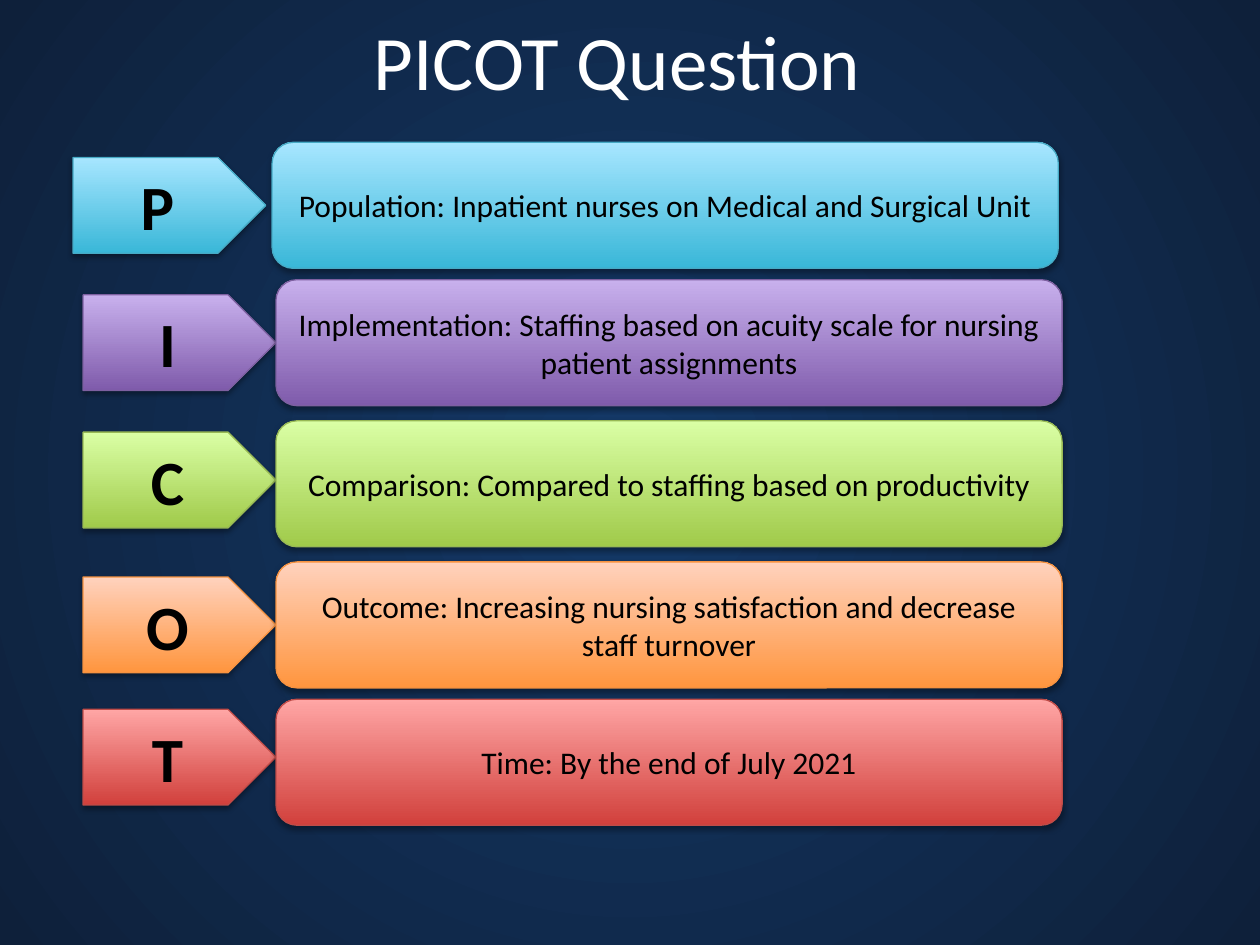
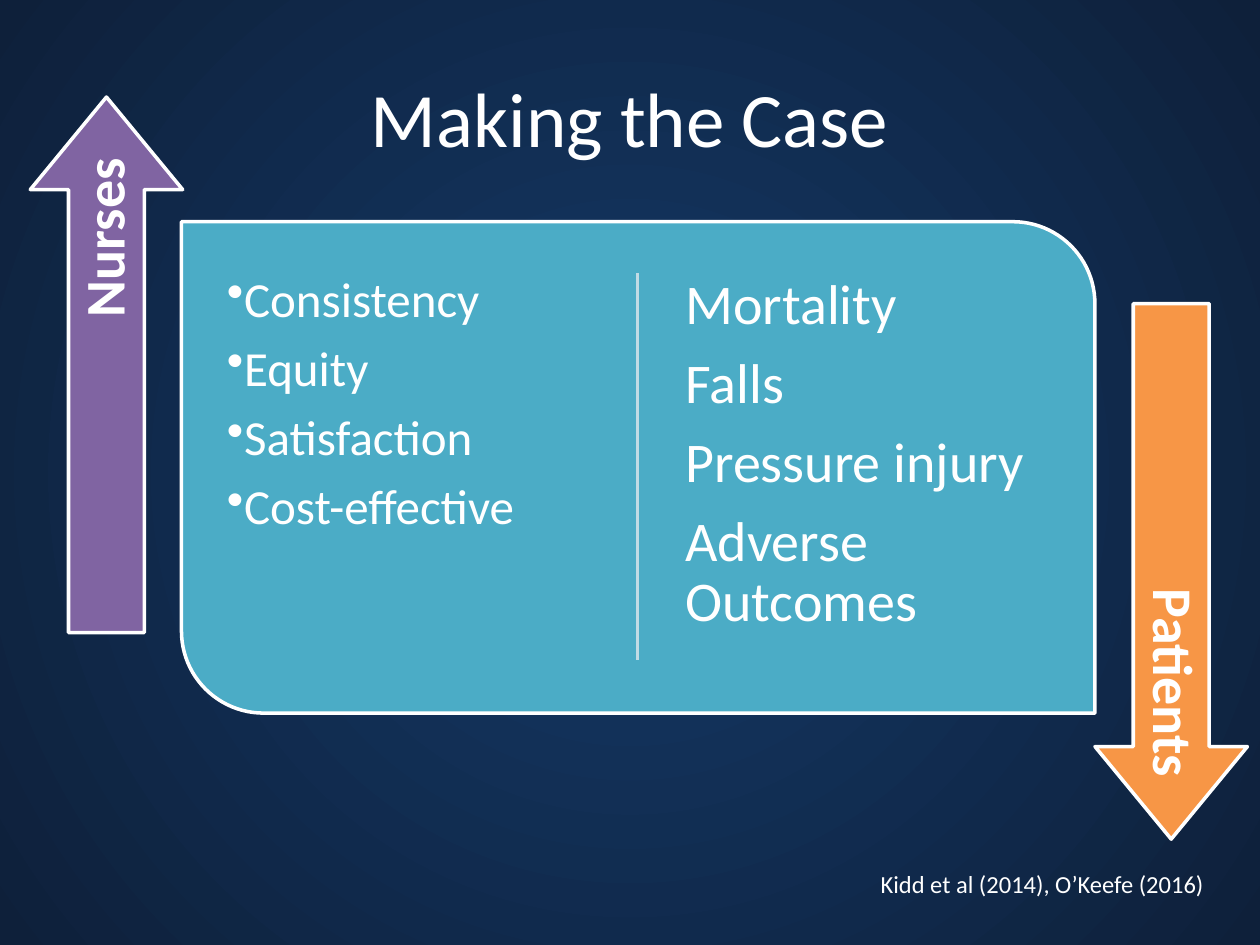
from dataclasses import dataclass

from lxml.etree import SubElement
from pptx import Presentation
from pptx.dml.color import RGBColor
from pptx.enum.shapes import MSO_CONNECTOR, MSO_SHAPE
from pptx.enum.text import MSO_ANCHOR, PP_ALIGN
from pptx.oxml.ns import qn
from pptx.util import Inches, Pt


@dataclass(frozen=True)
class Theme:
    font: str = "Calibri"
    white: str = "FFFFFF"
    black: str = "000000"
    backdrop: tuple = ("143968", "0E203A")
    # bottom colour, top colour, outline
    aqua: tuple = ("39B7D8", "A7E6FF", "46AAC5")
    purple: tuple = ("7F5BAB", "C8B0ED", "7D60A0")
    green: tuple = ("A0CA4A", "DAFFA5", "98B955")
    orange: tuple = ("FF953E", "FFD2BD", "F69240")
    red: tuple = ("D1403C", "FFA6A5", "BF4C48")
    panel: str = "4BACC6"
    divider: str = "C1DBE5"
    nurses: str = "8064A2"
    patients: str = "F79646"
    title_size: int = 44
    letter_size: int = 36
    large_size: int = 32
    bullet_size: int = 28
    body_size: int = 18
    citation_size: int = 14


THEME = Theme()
LINE_SPACING = 0.9
SPACE_AFTER = 0.33  # share of the type size

# letter, text, colours, arrow left and top, box left and top
PICOT_ROWS = [
    ("P", "Population: Inpatient nurses on Medical and Surgical Unit",
     THEME.aqua, (0.58, 1.25), (2.16, 1.13)),
    ("I", "Implementation: Staffing based on acuity scale for nursing "
     "patient assignments", THEME.purple, (0.66, 2.34), (2.19, 2.22)),
    ("C", "Comparison: Compared to staffing based on productivity",
     THEME.green, (0.66, 3.43), (2.19, 3.34)),
    ("O", "Outcome: Increasing nursing satisfaction and decrease staff turnover",
     THEME.orange, (0.66, 4.58), (2.19, 4.46)),
    ("T", "Time: By the end of July 2021",
     THEME.red, (0.66, 5.63), (2.19, 5.55)),
]
ARROW_SIZE = (1.53, 0.76)
BOX_SIZE = (6.24, 1)

NURSE_GAINS = ["Consistency", "Equity", "Satisfaction", "Cost-effective"]
PATIENT_HARMS = ["Mortality", "Falls", "Pressure injury", "Adverse Outcomes"]


def rgb(value):
    return RGBColor.from_string(value)


def set_gradient(fill, colors):
    fill.gradient()
    for stop, color in zip(fill.gradient_stops, colors):
        stop.color.rgb = rgb(color)


def add_slide(prs):
    """Add a blank slide with the radial backdrop."""
    s = prs.slides.add_slide(prs.slide_layouts[6])
    set_gradient(s.background.fill, THEME.backdrop)
    grad = s.element.find(".//" + qn("a:gradFill"))
    grad.remove(grad.find(qn("a:lin")))
    path = SubElement(grad, qn("a:path"), path="circle")
    SubElement(path, qn("a:fillToRect"), l="50000", t="50000", r="50000", b="50000")
    return s


def add_bullet(p):
    pPr = p._p.get_or_add_pPr()
    pPr.set("marL", "0")
    pPr.set("indent", "0")
    SubElement(pPr, qn("a:buChar"), char="•")


def write(sp, lines, size, color=THEME.white, bold=False, align=PP_ALIGN.LEFT,
          anchor=MSO_ANCHOR.TOP, inset=None, spaced=False, bulleted=False):
    tf = sp.text_frame
    frame_format = {"word_wrap": True, "vertical_anchor": anchor}
    if inset is not None:
        for side in ("left", "top", "right", "bottom"):
            frame_format[f"margin_{side}"] = Inches(inset)
    for name, value in frame_format.items():
        setattr(tf, name, value)
    paragraph_format = {"alignment": align}
    if spaced:
        paragraph_format |= {"line_spacing": LINE_SPACING,
                             "space_after": Pt(size * SPACE_AFTER)}
    font_format = {"name": THEME.font, "size": Pt(size), "bold": bold}
    for i, line in enumerate(lines):
        p = tf.add_paragraph() if i else tf.paragraphs[0]
        for name, value in paragraph_format.items():
            setattr(p, name, value)
        if bulleted:
            add_bullet(p)
        r = p.add_run()
        r.text = line
        for name, value in font_format.items():
            setattr(r.font, name, value)
        r.font.color.rgb = rgb(color)


def add_text(s, box, lines, size, rotation=0, **text_format):
    sp = s.shapes.add_textbox(*map(Inches, box))
    sp.rotation = rotation
    write(sp, lines, size, **text_format)


def add_title(s, left, top, text):
    add_text(s, (left, top, 9, 1.25), [text], THEME.title_size,
             align=PP_ALIGN.CENTER, anchor=MSO_ANCHOR.MIDDLE)


def add_soft_shadow(sp):
    sp.shadow.inherit = False
    effects = sp._element.spPr.find(qn("a:effectLst"))
    shadow = SubElement(effects, qn("a:outerShdw"), blurRad=str(Pt(3.1)),
                        dist=str(Pt(1.8)), dir="5400000", rotWithShape="0")
    color = SubElement(shadow, qn("a:srgbClr"), val=THEME.black)
    SubElement(color, qn("a:alpha"), val="35000")


def add_glossy_shape(s, kind, place, dimensions, colors, text, size, bold=False):
    sp = s.shapes.add_shape(kind, *map(Inches, place + dimensions))
    *fill_colors, outline = colors
    set_gradient(sp.fill, fill_colors)
    sp.fill.gradient_angle = 90
    sp.line.color.rgb = rgb(outline)
    sp.line.width = Pt(0.75)
    add_soft_shadow(sp)
    write(sp, [text], size, THEME.black, bold, PP_ALIGN.CENTER, MSO_ANCHOR.MIDDLE)


def add_flat_shape(s, kind, box, color, adjustments, rotation=0):
    sp = s.shapes.add_shape(kind, *map(Inches, box))
    sp.rotation = rotation
    sp.shadow.inherit = False
    for i, value in enumerate(adjustments):
        sp.adjustments[i] = value
    sp.fill.solid()
    sp.fill.fore_color.rgb = rgb(color)
    sp.line.color.rgb = rgb(THEME.white)
    sp.line.width = Pt(2)


def add_divider(s, x, top, bottom):
    line = s.shapes.add_connector(MSO_CONNECTOR.STRAIGHT,
                                  *map(Inches, (x, top, x, bottom)))
    line.line.color.rgb = rgb(THEME.divider)
    line.line.width = Pt(2)
    SubElement(line._element.spPr, qn("a:effectLst"))


def add_side_arrow(s, place, label_place, text, color, rotation):
    """Add a turned block arrow with its label near the head."""
    add_flat_shape(s, MSO_SHAPE.RIGHT_ARROW, place + (4.25, 1.21), color,
                   (0.498, 0.607), rotation)
    add_text(s, label_place + (3.89, 0.6), [text], THEME.large_size, rotation,
             bold=True, align=PP_ALIGN.RIGHT, anchor=MSO_ANCHOR.MIDDLE,
             inset=0.13, spaced=True)


def build_picot(prs):
    s = add_slide(prs)
    add_title(s, 0.4, -0.15, "PICOT Question")
    for letter, text, colors, arrow_place, box_place in PICOT_ROWS:
        add_glossy_shape(s, MSO_SHAPE.PENTAGON, arrow_place, ARROW_SIZE, colors,
                         letter, THEME.letter_size, bold=True)
        add_glossy_shape(s, MSO_SHAPE.ROUNDED_RECTANGLE, box_place, BOX_SIZE,
                         colors, text, THEME.body_size)


def build_case(prs):
    s = add_slide(prs)
    add_title(s, 0.5, 0.3, "Making the Case")
    add_flat_shape(s, MSO_SHAPE.ROUND_2_DIAG_RECTANGLE, (1.44, 1.76, 7.25, 3.9),
                   THEME.panel, (0, 0.167))
    add_divider(s, 5.06, 2.17, 5.24)
    add_text(s, (1.68, 2.06, 3.14, 3.31), NURSE_GAINS, THEME.bullet_size,
             inset=0.12, spaced=True, bulleted=True)
    add_text(s, (5.31, 2.06, 3.14, 3.31), PATIENT_HARMS, THEME.large_size,
             inset=0.13, spaced=True)
    add_side_arrow(s, (-1.28, 2.29), (-1.1, 2.77), "Nurses", THEME.nurses, 270)
    add_side_arrow(s, (7.17, 3.93), (7.35, 4.05), "Patients", THEME.patients, 90)
    add_text(s, (6.89, 6.85, 3.01, 0.34), ["Kidd et al (2014), O’Keefe (2016)"],
             THEME.citation_size)


def main():
    prs = Presentation()
    prs.slide_width, prs.slide_height = Inches(10), Inches(7.5)
    build_picot(prs)
    build_case(prs)
    prs.save("out.pptx")


if __name__ == "__main__":
    main()
